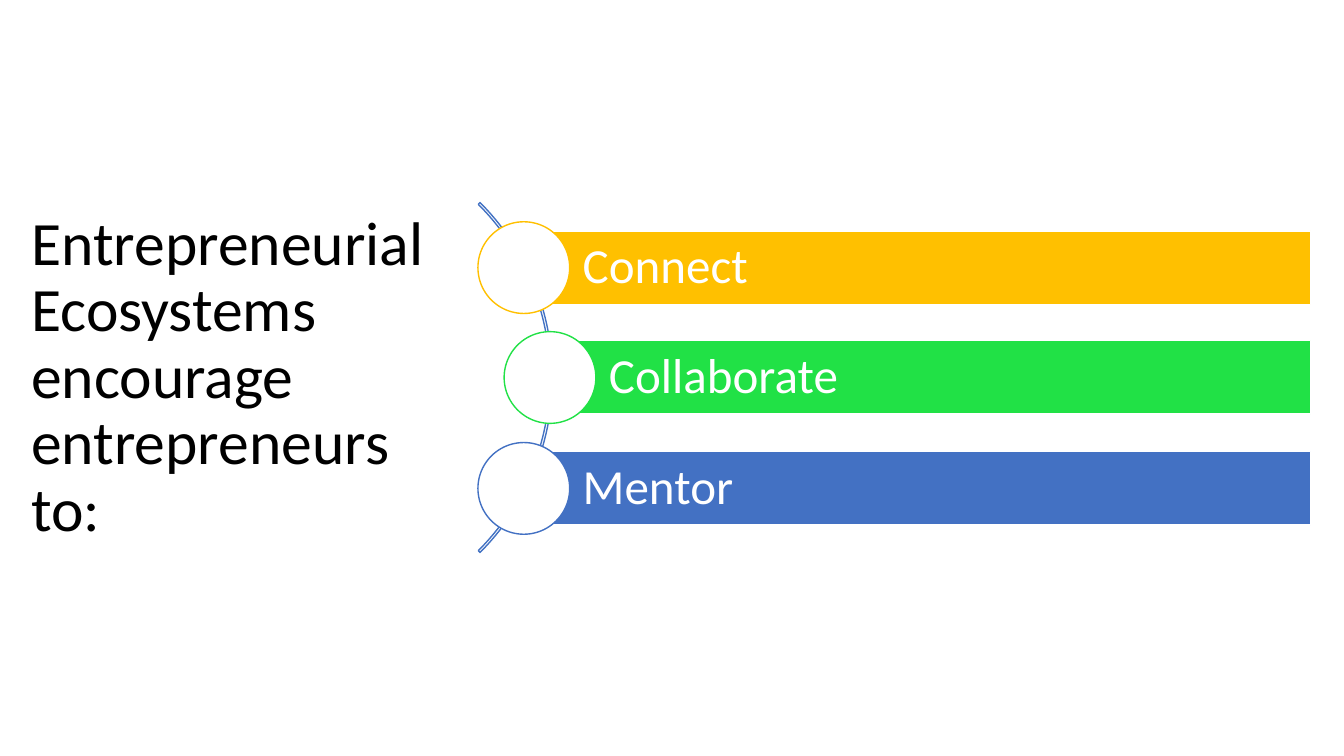
from dataclasses import dataclass
from typing import Any

from pptx import Presentation
from pptx import util as u
from pptx.dml import color
from pptx.enum import shapes, text

PX = 9144


@dataclass(frozen=True)
class Theme:
    font: str = "Calibri"
    title_size: int = 44
    label_size: int = 35
    line_width: int = 1
    ink: str = "000000"
    paper: str = "FFFFFF"
    arc: str = "4372C3"
    amber: str = "FFC000"
    green: str = "21E146"
    blue: str = "4371C3"


@dataclass(frozen=True)
class Box:
    left: int
    top: int
    width: int
    height: int

    def emu(self) -> list[int]:
        return [value * PX for value in (self.left, self.top, self.width, self.height)]


@dataclass(frozen=True)
class Step:
    label: str
    fill: str
    left: int


THEME = Theme()
STEPS = (
    Step("Connect", THEME.amber, 520),
    Step("Collaborate", THEME.green, 546),
    Step("Mentor", THEME.blue, 520),
)
BAR_RIGHT = 1300
BAR_TOP = 229
BAR_HEIGHT = 73
LAST_OFFSET = 219
CIRCLE_SIZE = 91
TITLE_BOX = Box(21, 193, 425, 365)
ARC_BOX = Box(57, 129, 491, 491)
ARC_ADJUSTMENTS = (189, 27, 0.005)


def apply_format(target: Any, values: dict[str, Any]) -> None:
    for name, value in values.items():
        setattr(target, name, value)


def write_text(shape: Any, words: str, size: int, ink: str, insets: tuple[int, ...]) -> None:
    frame = shape.text_frame
    left, top, right, bottom = (inset * PX for inset in insets)
    apply_format(frame, {
        "text": words,
        "word_wrap": True,
        "auto_size": text.MSO_AUTO_SIZE.NONE,
        "vertical_anchor": text.MSO_ANCHOR.MIDDLE,
        "margin_left": left,
        "margin_top": top,
        "margin_right": right,
        "margin_bottom": bottom,
    })
    paragraph = frame.paragraphs[0]
    apply_format(paragraph, {"alignment": text.PP_ALIGN.LEFT, "line_spacing": 0.9})
    font = paragraph.runs[0].font
    apply_format(font, {"name": THEME.font, "size": u.Pt(size)})
    font.color.rgb = color.RGBColor.from_string(ink)


def add_outline_shape(slide: Any, kind: Any, box: Box, line: str, fill: str | None = None) -> Any:
    shape = slide.shapes.add_shape(kind, *box.emu())
    shape.shadow.inherit = False
    if fill is None:
        shape.fill.background()
    else:
        shape.fill.solid()
        shape.fill.fore_color.rgb = color.RGBColor.from_string(fill)
    shape.line.color.rgb = color.RGBColor.from_string(line)
    shape.line.width = u.Pt(THEME.line_width)
    return shape


def add_title(slide: Any) -> None:
    title = slide.shapes.title
    apply_format(title, dict(zip(("left", "top", "width", "height"), TITLE_BOX.emu())))
    write_text(title, "Entrepreneurial Ecosystems encourage entrepreneurs to:",
               THEME.title_size, THEME.ink, (10, 5, 10, 5))


def add_arc(slide: Any) -> None:
    arc = add_outline_shape(slide, shapes.MSO_SHAPE.BLOCK_ARC, ARC_BOX, THEME.arc)
    for index, value in enumerate(ARC_ADJUSTMENTS):
        arc.adjustments[index] = value


def add_step(slide: Any, step: Step, top: int) -> None:
    bar_box = Box(step.left, top, BAR_RIGHT - step.left, BAR_HEIGHT)
    bar = add_outline_shape(slide, shapes.MSO_SHAPE.RECTANGLE, bar_box, THEME.paper, step.fill)
    write_text(bar, step.label, THEME.label_size, THEME.paper, (58, 10, 10, 10))
    circle_top = top - (CIRCLE_SIZE - BAR_HEIGHT) // 2
    circle_left = step.left - (CIRCLE_SIZE + 1) // 2
    circle_box = Box(circle_left, circle_top, CIRCLE_SIZE, CIRCLE_SIZE)
    add_outline_shape(slide, shapes.MSO_SHAPE.OVAL, circle_box, step.fill, THEME.paper)


def main() -> None:
    presentation = Presentation()
    apply_format(presentation, {"slide_width": 1333 * PX, "slide_height": 750 * PX})
    slide = presentation.slides.add_slide(presentation.slide_layouts.get_by_name("Title Only"))
    add_title(slide)
    add_arc(slide)
    for index, step in enumerate(STEPS):
        add_step(slide, step, BAR_TOP + index * LAST_OFFSET // (len(STEPS) - 1))
    presentation.save("out.pptx")


if __name__ == "__main__":
    main()
